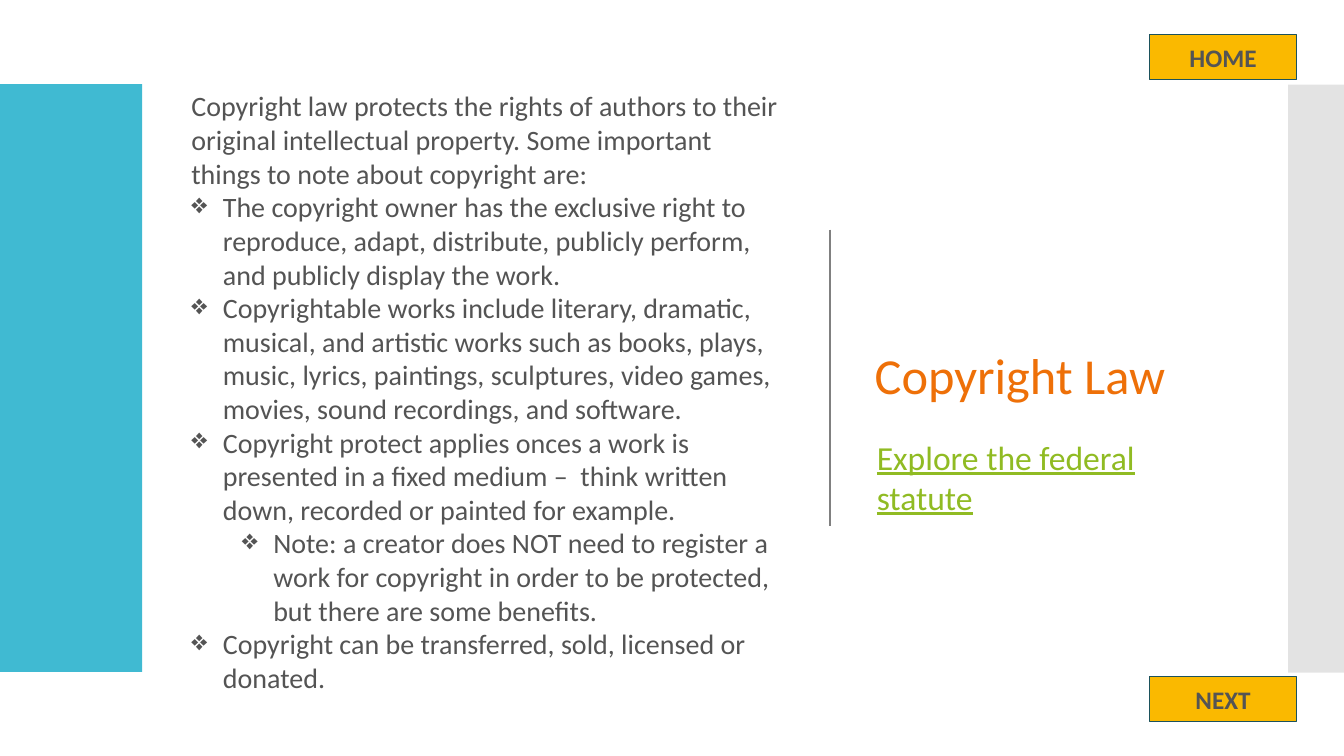
from lxml import etree
from pptx import Presentation
from pptx.dml.color import RGBColor
from pptx.enum.shapes import MSO_CONNECTOR as Connector, MSO_SHAPE as Shape
from pptx.enum.text import MSO_ANCHOR as Anchor, PP_ALIGN as Align
from pptx.oxml.ns import qn
from pptx.util import Pt


def color(value):
    return RGBColor.from_string(value)


def add_text(left, top, width, height, text, size, text_color):
    frame = slide.shapes.add_textbox(Pt(left), Pt(top), Pt(width), Pt(height)).text_frame
    frame.word_wrap = True
    frame.text = text
    for paragraph in frame.paragraphs:
        paragraph.font.name = "Calibri"
        paragraph.font.size = Pt(size)
        paragraph.font.color.rgb = color(text_color)
    return frame


presentation = Presentation()
presentation.slide_width, presentation.slide_height = Pt(960), Pt(540)
slide = presentation.slides.add_slide(presentation.slide_layouts[6])

# Title
title = add_text(617.76, 85.7, 276.5, 369.4, "Copyright Law", 36, "EE7008")
title.vertical_anchor = Anchor.MIDDLE
title.paragraphs[0].line_spacing = 0.9

# Side bands
for left, top, width, fill, alpha in [(0, 60, 101.5, "40BAD2", 100), (920, 60.5, 40, "C8C8C8", 50)]:
    band = slide.shapes.add_shape(Shape.RECTANGLE, Pt(left), Pt(top), Pt(width), Pt(420))
    band.shadow.inherit = False
    band.fill.solid()
    band.fill.fore_color.rgb = color(fill)
    band.line.fill.background()
    if alpha < 100:
        fill_color = next(band.element.spPr.iter(qn("a:srgbClr")))
        etree.SubElement(fill_color, qn("a:alpha"), val=str(alpha * 1000))

# Divider
divider = slide.shapes.add_connector(Connector.STRAIGHT, Pt(593), Pt(164), Pt(593), Pt(376))
divider.line.color.rgb = color("808080")
divider.line.width = Pt(1)
etree.SubElement(divider.element.spPr, qn("a:effectLst"))

# Navigation buttons
for label, top in [("HOME", 24.5), ("NEXT", 483)]:
    button = slide.shapes.add_shape(Shape.RECTANGLE, Pt(821.25), Pt(top), Pt(104.75), Pt(32.5))
    button.shadow.inherit = False
    button.fill.solid()
    button.fill.fore_color.rgb = color("FAB900")
    button.line.color.rgb = color("1C525C")
    button.line.width = Pt(0.85)
    button.text_frame.text = label
    button.text_frame.vertical_anchor = Anchor.MIDDLE
    paragraph = button.text_frame.paragraphs[0]
    paragraph.alignment = Align.CENTER
    paragraph.font.name = "Calibri"
    paragraph.font.size = Pt(18)
    paragraph.font.bold = True
    paragraph.font.color.rgb = color("545454")

# Body: text and outline level, None for the introduction
points = [
    ("Copyright law protects the rights of authors to their original intellectual property. "
     "Some important things to note about copyright are:", None),
    ("The copyright owner has the exclusive right to reproduce, adapt, distribute, "
     "publicly perform, and publicly display the work.", 0),
    ("Copyrightable works include literary, dramatic, musical, and artistic works such as books, "
     "plays, music, lyrics, paintings, sculptures, video games, movies, sound recordings, "
     "and software.", 0),
    ("Copyright protect applies onces a work is presented in a fixed medium –  think written down, "
     "recorded or painted for example.", 0),
    ("Note: a creator does NOT need to register a work for copyright in order to be protected, "
     "but there are some benefits.", 1),
    ("Copyright can be transferred, sold, licensed or donated.", 0),
]
body = add_text(129.6, 60, 439, 443.5, "\n".join(text for text, level in points), 20, "545454")
for paragraph, (text, level) in zip(body.paragraphs, points):
    if level is None:
        continue
    paragraph.level = level
    properties = paragraph._p.get_or_add_pPr()
    properties.set("marL", str(Pt(22.5 + 36 * level)))
    properties.set("indent", str(Pt(-22.5)))
    bullet = etree.Element(qn("a:buChar"), char="❖")
    properties.insert(0, bullet)

# Statute label
statute = add_text(619.2, 308.2, 233.3, 65.5, "Explore the federal statute", 24, "90BB23")
statute.paragraphs[0].font.underline = True

presentation.save("out.pptx")
